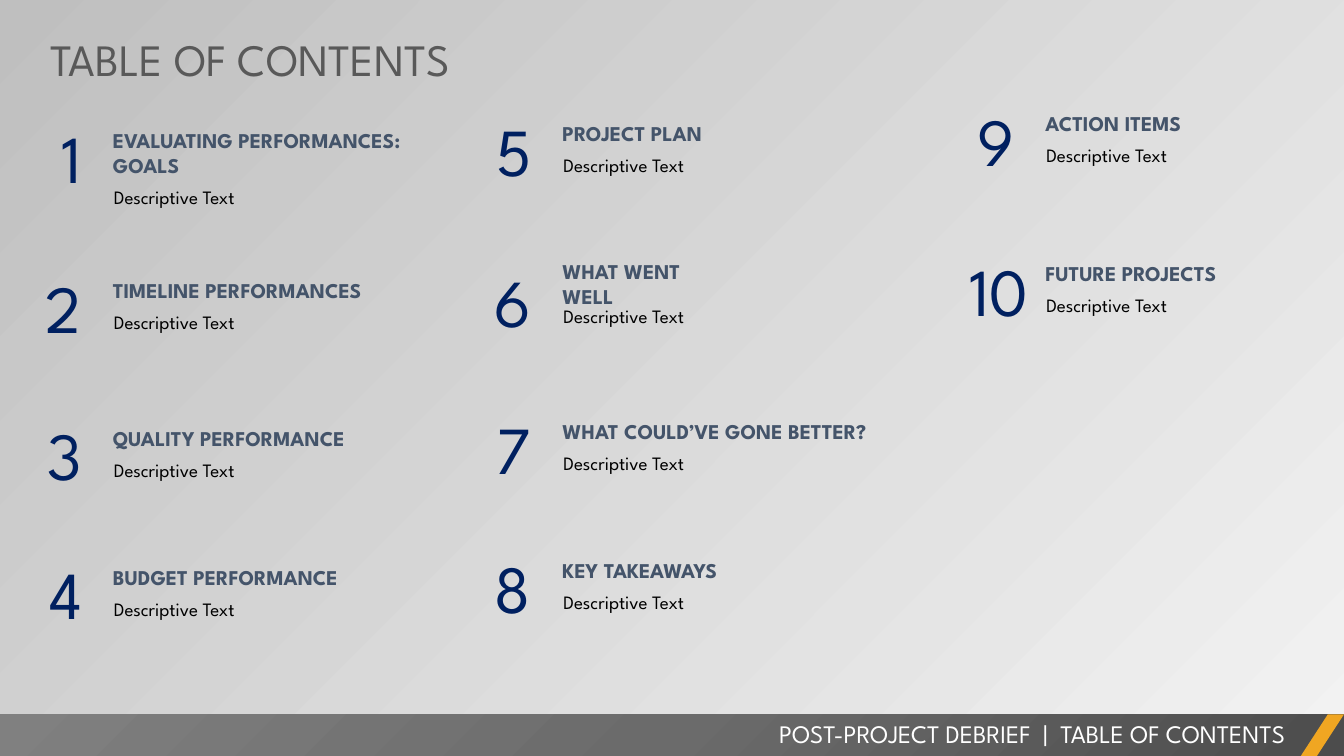
from dataclasses import dataclass

from pptx import Presentation
from pptx.dml.color import RGBColor
from pptx.enum.shapes import MSO_SHAPE
from pptx.enum.text import MSO_ANCHOR, MSO_AUTO_SIZE, PP_ALIGN
from pptx.oxml import parse_xml
from pptx.oxml.ns import nsdecls, qn
from pptx.shapes.autoshape import Shape
from pptx.slide import Slide
from pptx.util import Pt


@dataclass(frozen=True)
class Theme:
    font: str = "League Spartan"
    title: str = "595959"
    digit: str = "002060"
    label: str = "44546A"
    note: str = "000000"
    white: str = "FFFFFF"
    accent: str = "F0A622"
    light: str = "F2F2F2"
    dark: str = "BFBFBF"
    bar: tuple[str, ...] = ("4C4C4C", "6B6B6B", "808080")
    title_size: float = 32
    digit_size: float = 48
    label_size: float = 15
    note_size: float = 13.5
    foot_size: float = 18


@dataclass(frozen=True)
class Entry:
    label: str
    width: float
    digit_width: float = 41.8
    digit_shift: float = 0


@dataclass(frozen=True)
class Column:
    left: float
    shift: float
    items: tuple[Entry, ...]


THEME = Theme()
ROWS = (65.5, 172.8, 278, 377.3)
COLUMNS = (
    Column(23.8, 0, (
        Entry("EVALUATING PERFORMANCES:\nGOALS", 237),
        Entry("TIMELINE PERFORMANCES", 199),
        Entry("QUALITY PERFORMANCE", 189),
        Entry("BUDGET PERFORMANCE", 185),
    )),
    Column(344.9, -4.8, (
        Entry("PROJECT PLAN", 120),
        Entry("WHAT WENT WELL", 136),
        Entry("WHAT COULD’VE GONE BETTER?", 242),
        Entry("KEY TAKEAWAYS", 133),
    )),
    Column(689.8, -12.2, (
        Entry("ACTION ITEMS", 117),
        Entry("FUTURE PROJECTS", 140, 68.4, -16.6),
    )),
)


def write(shape: Shape, text: str, *, size: float, color: str, bold: bool = False,
          align: PP_ALIGN = PP_ALIGN.LEFT, anchor: MSO_ANCHOR = MSO_ANCHOR.TOP,
          inset: tuple[float, ...] = (7.2, 3.6, 7.2, 3.6),
          line: float | None = None, before: float = 0) -> None:
    frame = shape.text_frame
    frame.text = text
    frame.word_wrap = True
    frame.auto_size = MSO_AUTO_SIZE.NONE
    frame.vertical_anchor = anchor
    frame.margin_left, frame.margin_top, frame.margin_right, frame.margin_bottom = map(Pt, inset)
    for para in frame.paragraphs:
        para.alignment = align
        para.space_before = Pt(before)
        if line:
            para.line_spacing = Pt(line)
        for run in para.runs:
            font = run.font
            font.name, font.size, font.bold = THEME.font, Pt(size), bold
            font.color.rgb = RGBColor.from_string(color)


def box(slide: Slide, left: float, top: float, width: float, height: float) -> Shape:
    return slide.shapes.add_textbox(Pt(left), Pt(top), Pt(width), Pt(height))


def block(slide: Slide, kind: MSO_SHAPE, left: float, width: float, color: str) -> Shape:
    shape = slide.shapes.add_shape(kind, Pt(left), Pt(510.3), Pt(width), Pt(30))
    shape.shadow.inherit = False
    shape.fill.solid()
    shape.fill.fore_color.rgb = RGBColor.from_string(color)
    shape.line.fill.background()
    return shape


def shade(shape: Shape, colors: tuple[str, ...]) -> None:
    """Replace a solid fill with a radial one centred on the lower right corner."""
    step = 100000 // (len(colors) - 1)
    stops = "".join(f'<a:gs pos="{i * step}"><a:srgbClr val="{c}"/></a:gs>'
                    for i, c in enumerate(colors))
    grad = parse_xml(
        f'<a:gradFill {nsdecls("a")} rotWithShape="1"><a:gsLst>{stops}</a:gsLst>'
        '<a:path path="circle"><a:fillToRect l="100000" t="100000"/></a:path></a:gradFill>')
    props = shape.element.spPr
    props.replace(props.find(qn("a:solidFill")), grad)


def add_entry(slide: Slide, entry: Entry, number: int, left: float, top: float) -> None:
    extra = 18 * entry.label.count("\n")
    write(box(slide, left + entry.digit_shift, top, entry.digit_width, 80), str(number),
          size=THEME.digit_size, color=THEME.digit, align=PP_ALIGN.RIGHT,
          inset=(7.2, 25.2, 7.2, 3.6), line=50)
    write(box(slide, left + 49.8, top + 22, entry.width, 25.4 + extra), entry.label,
          size=THEME.label_size, color=THEME.label, bold=True, anchor=MSO_ANCHOR.MIDDLE)
    write(box(slide, left + 49, top + 39.7 + extra, 242.6, 28), "Descriptive Text",
          size=THEME.note_size, color=THEME.note,
          inset=(8.6, 4.3, 8.6, 4.3), line=21.5, before=2.7)


def main() -> None:
    deck = Presentation()
    deck.slide_width, deck.slide_height = Pt(960), Pt(540)
    slide = deck.slides.add_slide(deck.slide_layouts[5])

    # Background
    fill = slide.background.fill
    fill.gradient()
    fill.gradient_angle = 135
    for stop, color in zip(fill.gradient_stops, (THEME.light, THEME.dark)):
        stop.color.rgb = RGBColor.from_string(color)

    # Title
    title = slide.shapes.title
    title.left, title.top, title.width, title.height = map(Pt, (28.8, 19.4, 327.6, 46))
    write(title, "TABLE OF CONTENTS", size=THEME.title_size, color=THEME.title)

    # Numbered entries, column by column
    number = 0
    for column in COLUMNS:
        for row, entry in zip(ROWS, column.items):
            number += 1
            add_entry(slide, entry, number, column.left, row + column.shift)

    # Footer
    shade(block(slide, MSO_SHAPE.RECTANGLE, 0, 960, THEME.bar[0]), THEME.bar)
    write(box(slide, 378, 509.8, 547.2, 29), "POST-PROJECT DEBRIEF  |  TABLE OF CONTENTS",
          size=THEME.foot_size, color=THEME.white, align=PP_ALIGN.RIGHT)
    slash = block(slide, MSO_SHAPE.PARALLELOGRAM, 929, 31, THEME.accent)
    slash.adjustments[0] = 0.65

    deck.save("out.pptx")


if __name__ == "__main__":
    main()
